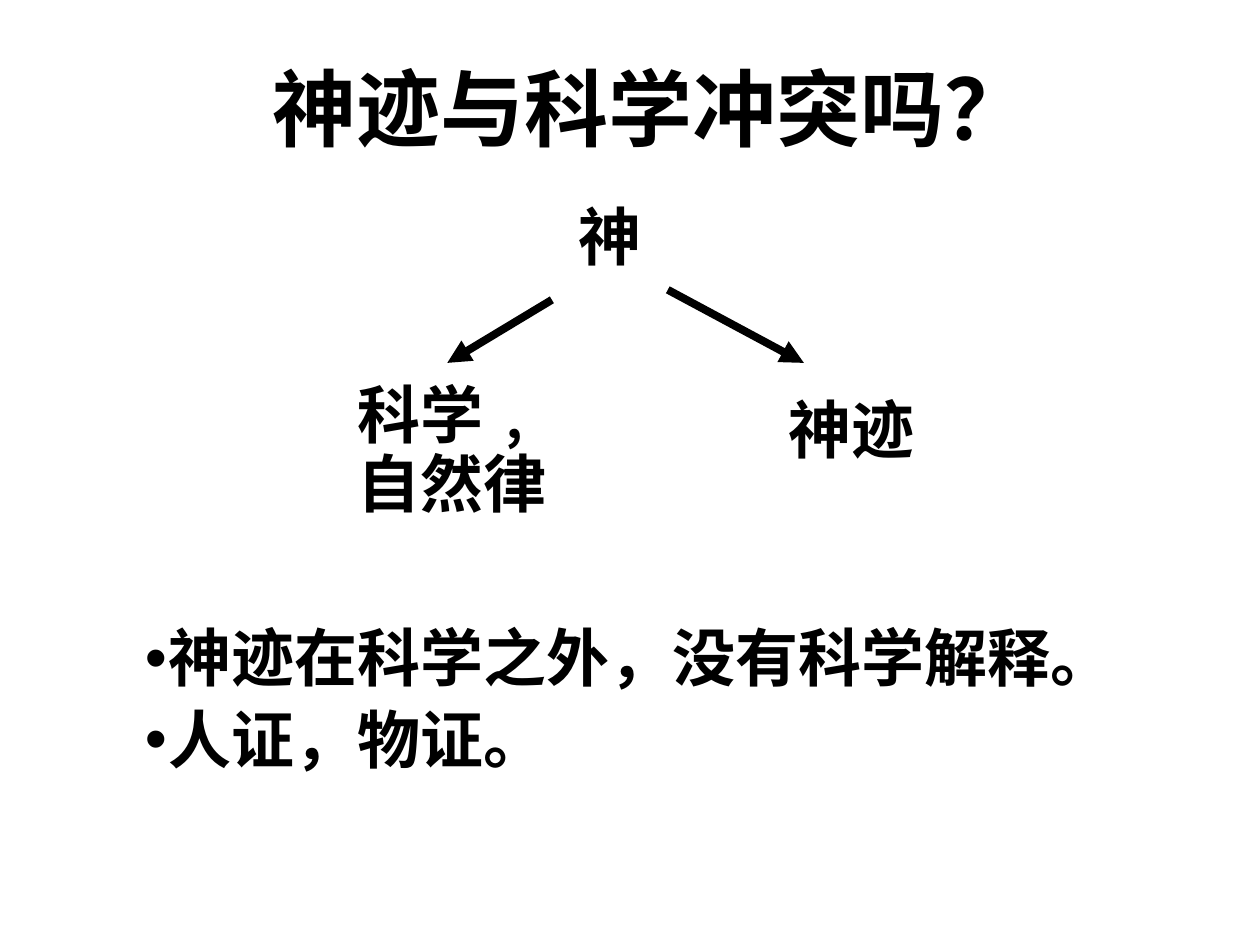
from dataclasses import dataclass

from lxml import etree
from pptx import Presentation
from pptx.dml.color import RGBColor
from pptx.enum.shapes import MSO_CONNECTOR
from pptx.enum.text import MSO_ANCHOR, MSO_AUTO_SIZE, PP_ALIGN
from pptx.oxml.ns import qn
from pptx.util import Inches, Pt

CENTER, LEFT = PP_ALIGN.CENTER, PP_ALIGN.LEFT
MIDDLE, TOP = MSO_ANCHOR.MIDDLE, MSO_ANCHOR.TOP
FIXED = MSO_AUTO_SIZE.NONE
STRAIGHT = MSO_CONNECTOR.STRAIGHT
WIDE, HIGH = Inches(10), Inches(7.5)


@dataclass(frozen=True)
class Theme:
    ink: RGBColor = RGBColor(0, 0, 0)
    main: tuple = ("Calibri", "Calibri")
    label: tuple = ("Noto Sans CJK TC", "Noto Sans CJK TC")
    mixed: tuple = ("Times New Roman", "Calibri")
    head: int = 48
    text: int = 36
    line: float = 4.5


THEME = Theme()


def share(x, y):
    return round(WIDE * x / 100), round(HIGH * y / 100)


def place(shape, x, y, w, h):
    shape.left, shape.top = share(x, y)
    shape.width, shape.height = share(w, h)


def style(para, faces, size):
    latin, asian = faces
    font = para.font
    font.size, font.bold = Pt(size), True
    font.color.rgb = THEME.ink
    font.name = latin
    props = para._p.pPr.find(qn("a:defRPr"))
    etree.SubElement(props, qn("a:ea"), typeface=asian)


def bullet(para):
    props = para._p.get_or_add_pPr()
    indent = Inches(0.19)
    props.set("marL", str(indent))
    props.set("indent", str(-indent))
    etree.SubElement(props, qn("a:buChar"), char="•")


def write(shape, lines, faces, size, align=CENTER, anchor=TOP,
          pitch=None, gap=0, listed=False):
    frame = shape.text_frame
    frame.word_wrap = True
    frame.auto_size = FIXED
    frame.vertical_anchor = anchor
    frame.text = "\n".join(lines)
    for i, para in enumerate(frame.paragraphs):
        if listed:
            bullet(para)
        para.alignment = align
        para.line_spacing = pitch
        para.space_before = Pt(gap if i else 0)
        style(para, faces, size)


def label(slide, spot, lines, faces, **rules):
    box = slide.shapes.add_textbox(0, 0, 0, 0)
    place(box, *spot)
    write(box, lines, faces, THEME.text, **rules)


def arrow(slide, start, end):
    link = slide.shapes.add_connector(STRAIGHT, *share(*start), *share(*end))
    link.line.color.rgb = THEME.ink
    link.line.width = Pt(THEME.line)
    props = link._element.spPr
    etree.SubElement(props.find(qn("a:ln")), qn("a:tailEnd"), type="triangle")
    etree.SubElement(props, qn("a:effectLst"))


def main():
    deck = Presentation()
    deck.slide_width, deck.slide_height = WIDE, HIGH
    slide = deck.slides.add_slide(deck.slide_layouts[1])
    title, body = slide.placeholders

    place(title, 9.1, 5.87, 85, 12.27)
    write(title, ["神迹与科学冲突吗？"], THEME.main, THEME.head,
          anchor=MIDDLE, pitch=0.9)
    place(body, 10.5, 65.73, 85, 20)
    write(body, ["神迹在科学之外，没有科学解释。", "人证，物证。"],
          THEME.main, THEME.text, align=LEFT, pitch=0.9, gap=7.5, listed=True)

    label(slide, (40.5, 20.27, 15.8, 9.33), ["神"], THEME.label)
    label(slide, (23, 42.53, 25.8, 13.33), ["科学﹐", "自然律"],
          THEME.label, pitch=0.5, gap=18)
    label(slide, (58, 40.67, 19.2, 9.33), ["神迹"], THEME.mixed)
    arrow(slide, (43.8, 31.73), (35.5, 38.4))
    arrow(slide, (53, 30.67), (63.8, 38.4))
    deck.save("out.pptx")


if __name__ == "__main__":
    main()
